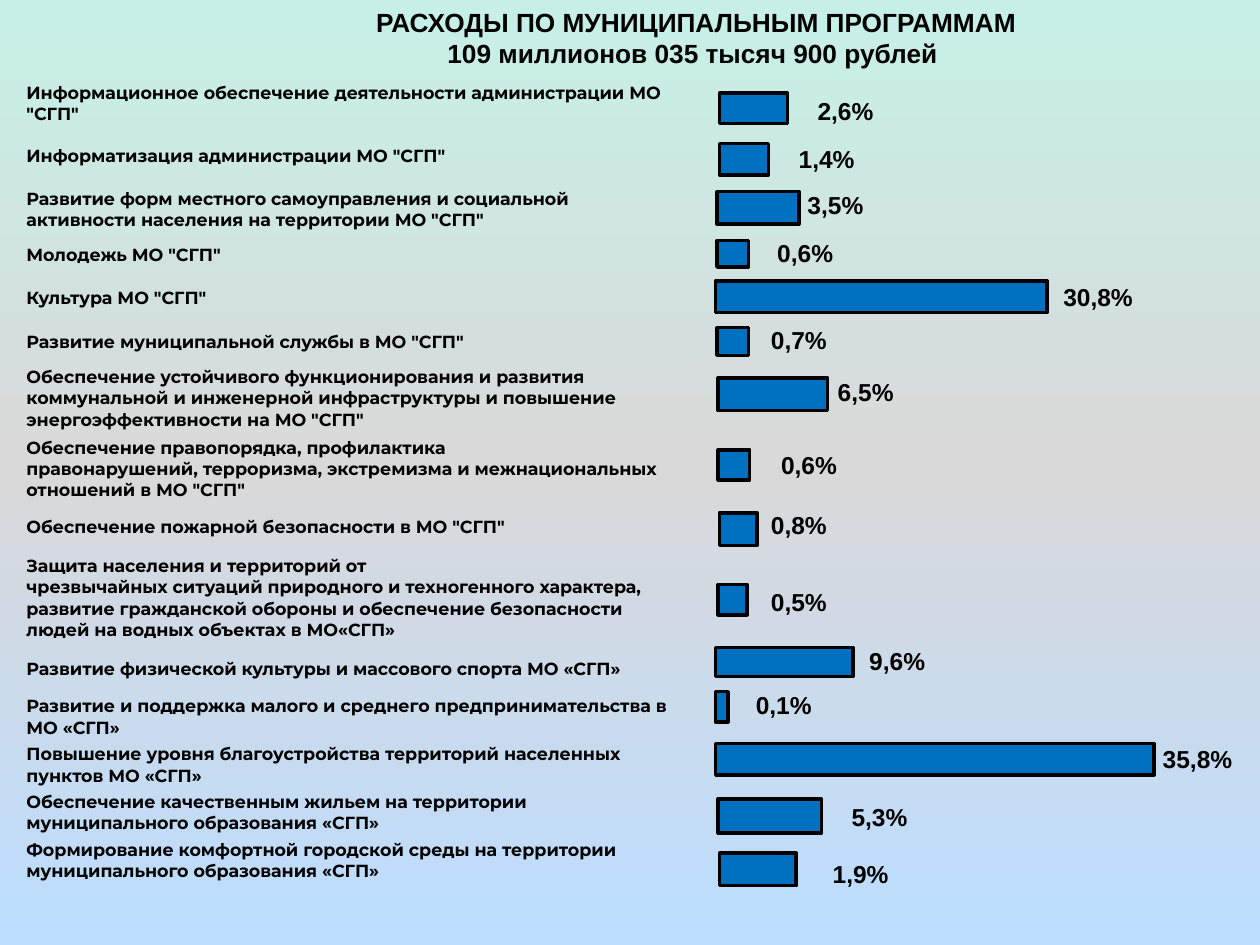
"""Build a slide of municipal programme spending with labelled bars."""
from copy import deepcopy

from pptx import Presentation
from pptx.dml.color import RGBColor as RGB
from pptx.enum.shapes import MSO_SHAPE as Shape
from pptx.enum.text import MSO_ANCHOR as Anchor, MSO_AUTO_SIZE as AutoSize, PP_ALIGN as Align
from pptx.oxml.ns import qn
from pptx.util import Inches, Pt

THEME = {
    "background": [(0, "C6F0E7"), (0.5, "D9D9D9"), (1, "BBDDFF")],
    "bar": "0070C0",
    "ink": "000000",
    "outline": 2,
    "title": ("Arial", 15),
    "program": ("Montserrat", 10),
    "share": ("Arial", 14),
    "plain_table": "{2D5ABB26-0587-4C30-8999-92F81FD0307C}",
}

TITLE = ["РАСХОДЫ ПО МУНИЦИПАЛЬНЫМ ПРОГРАММАМ", "109 миллионов 035 тысяч 900 рублей "]

# program lines, row height, bar (left, top, width, height), share, share (left, top)
PROGRAMS = [
    (['Информационное обеспечение деятельности администрации МО "СГП"'],
     0.38, (5.71, 0.74, 0.54, 0.24), "2,6%", (6.39, 0.71)),
    (['Информатизация администрации МО "СГП"'],
     0.45, (5.71, 1.14, 0.39, 0.25), "1,4%", (6.24, 1.09)),
    (['Развитие форм местного самоуправления и социальной активности населения '
      'на территории МО "СГП"'],
     0.4, (5.69, 1.52, 0.65, 0.26), "3,5%", (6.31, 1.46)),
    (['Молодежь МО "СГП"'],
     0.32, (5.69, 1.91, 0.25, 0.21), "0,6%", (6.07, 1.84)),
    (['Культура МО "СГП"'],
     0.36, (5.68, 2.23, 2.63, 0.25), "30,8%", (8.34, 2.19)),
    (['Развитие муниципальной службы в МО "СГП"'],
     0.34, (5.69, 2.6, 0.25, 0.22), "0,7%", (6.02, 2.53)),
    (['Обеспечение устойчивого функционирования и развития коммунальной и инженерной '
      'инфраструктуры и повышение энергоэффективности на МО "СГП"'],
     0.56, (5.7, 3, 0.87, 0.26), "6,5%", (6.55, 2.94)),
    (['Обеспечение правопорядка, профилактика',
      'правонарушений, терроризма, экстремизма и межнациональных отношений в МО "СГП"'],
     0.56, (5.7, 3.57, 0.25, 0.24), "0,6%", (6.1, 3.52)),
    (['Обеспечение пожарной безопасности в МО "СГП"'],
     0.37, (5.71, 4.07, 0.3, 0.26), "0,8%", (6.02, 4)),
    (['Защита населения и территорий от',
      'чрезвычайных ситуаций природного и техногенного характера, развитие гражданской '
      'обороны и обеспечение безопасности людей на водных объектах в МО«СГП»'],
     0.75, (5.7, 4.64, 0.23, 0.24), "0,5%", (6.02, 4.61)),
    (['Развитие физической культуры и массового спорта МО «СГП»'],
     0.38, (5.68, 5.14, 1.09, 0.23), "9,6%", (6.8, 5.08)),
    (['Развитие и поддержка малого и среднего предпринимательства в МО «СГП»'],
     0.38, (5.68, 5.49, 0.1, 0.24), "0,1%", (5.9, 5.43)),
    (['Повышение уровня благоустройства территорий населенных пунктов МО «СГП»'],
     0.38, (5.68, 5.9, 3.48, 0.25), "35,8%", (9.13, 5.86)),
    (['Обеспечение качественным жильем на территории муниципального образования «СГП»'],
     0.38, (5.7, 6.34, 0.82, 0.27), "5,3%", (6.66, 6.32)),
    (['Формирование комфортной городской среды на территории муниципального '
      'образования «СГП»'],
     0.38, (5.71, 6.77, 0.61, 0.26), "1,9%", (6.51, 6.77)),
]


def color(name):
    return RGB.from_string(THEME[name])


def write(frame, lines, style, align=Align.LEFT):
    paragraph = frame.paragraphs[0]
    paragraph.alignment = align
    for index, line in enumerate(lines):
        if index:
            paragraph.add_line_break()
        run = paragraph.add_run()
        run.text = line
        run.font.name, size = THEME[style]
        run.font.size = Pt(size)
        run.font.bold = True
        run.font.color.rgb = color("ink")


def paint_background(slide):
    fill = slide.background.fill
    fill.gradient()
    fill.gradient_angle = 270
    stop_list = next(slide.element.iter(qn("a:gsLst")))
    stop_list.append(deepcopy(stop_list[-1]))
    for stop, (position, shade) in zip(fill.gradient_stops, THEME["background"]):
        stop.position = position
        stop.color.rgb = RGB.from_string(shade)


def add_title(slide):
    title = slide.shapes.add_textbox(Inches(1.33), Inches(0.05), Inches(8.39), Inches(0.5))
    title.text_frame.word_wrap = True
    title.text_frame.vertical_anchor = Anchor.MIDDLE
    write(title.text_frame, TITLE, "title", Align.CENTER)


def add_programs(slide):
    total = sum(height for _, height, *_ in PROGRAMS)
    table = slide.shapes.add_table(
        len(PROGRAMS), 1, Inches(0.2), Inches(0.63), Inches(5.13), Inches(total)).table
    table.first_row = table.horz_banding = False
    next(table._tbl.iter(qn("a:tableStyleId"))).text = THEME["plain_table"]
    for row, (lines, height, *_) in zip(table.rows, PROGRAMS):
        row.height = Inches(height)
        cell = row.cells[0]
        cell.fill.background()
        cell.vertical_anchor = Anchor.MIDDLE
        cell.margin_left = cell.margin_right = cell.margin_top = Inches(0.01)
        cell.margin_bottom = 0
        write(cell.text_frame, lines, "program")


def add_bar(slide, place):
    bar = slide.shapes.add_shape(Shape.RECTANGLE, *map(Inches, place))
    bar.shadow.inherit = False
    bar.fill.solid()
    bar.fill.fore_color.rgb = color("bar")
    bar.line.color.rgb = color("ink")
    bar.line.width = Pt(THEME["outline"])


def add_share(slide, share, corner):
    width = 0.87 if corner[0] > 9 else 0.82
    label = slide.shapes.add_textbox(*map(Inches, (*corner, width, 0.34)))
    label.text_frame.word_wrap = True
    label.text_frame.auto_size = AutoSize.SHAPE_TO_FIT_TEXT
    write(label.text_frame, [share], "share")


def main():
    deck = Presentation()
    deck.slide_width, deck.slide_height = Inches(10), Inches(7.5)
    slide = deck.slides.add_slide(deck.slide_layouts[6])
    paint_background(slide)
    add_title(slide)
    add_programs(slide)
    for _, _, place, _, _ in PROGRAMS:
        add_bar(slide, place)
    for _, _, _, share, corner in PROGRAMS:
        add_share(slide, share, corner)
    deck.save("out.pptx")


if __name__ == "__main__":
    main()
